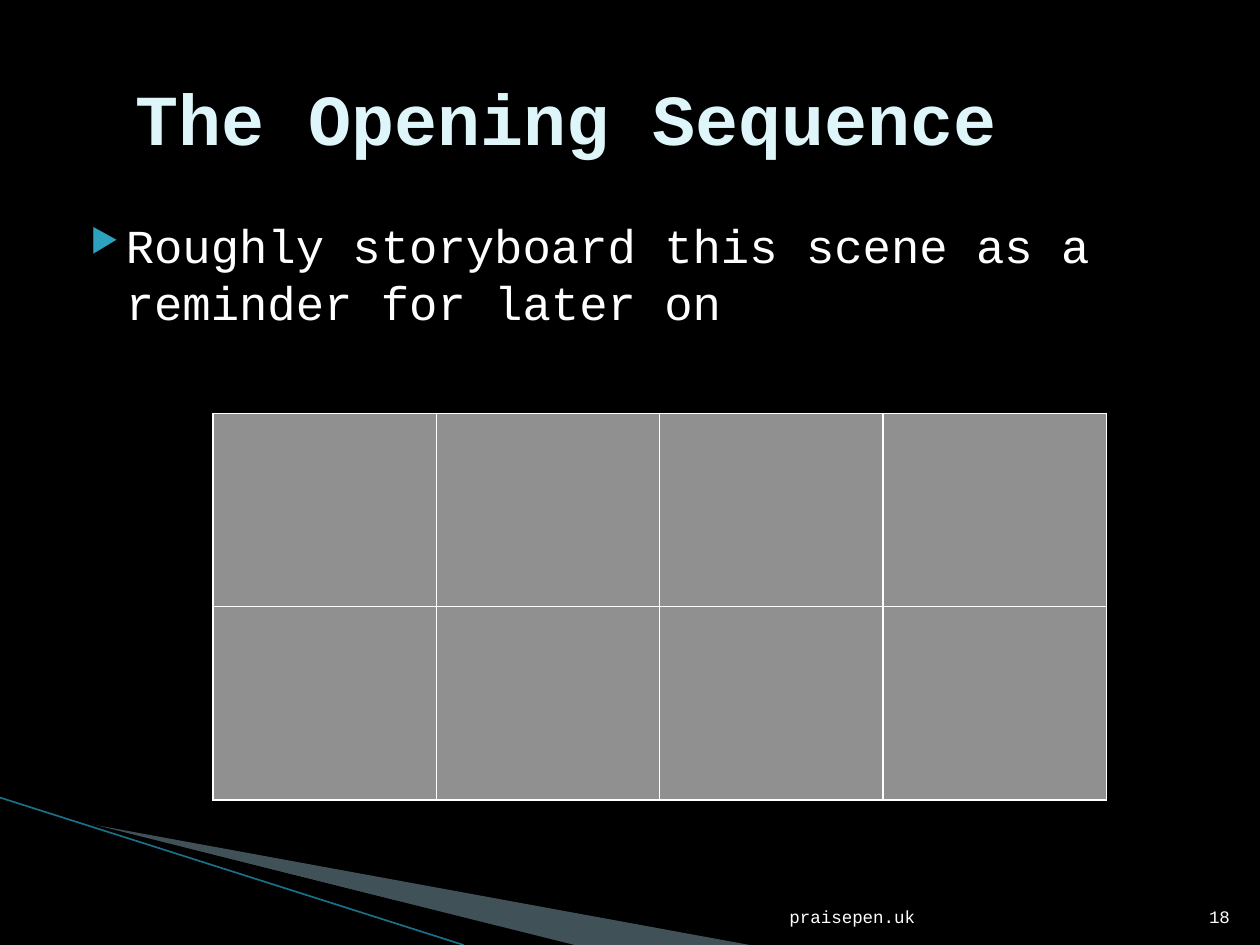
from lxml.etree import SubElement
from pptx import Presentation
from pptx.dml.color import RGBColor as RGB
from pptx.enum.shapes import MSO_CONNECTOR as Connector
from pptx.enum.text import MSO_ANCHOR as Anchor, PP_ALIGN as Align
from pptx.oxml import parse_xml
from pptx.oxml.ns import nsdecls, qn
from pptx.util import Inches, Pt

BLACK = RGB(0x00, 0x00, 0x00)
WHITE = RGB(0xFF, 0xFF, 0xFF)
ICE = RGB(0xDE, 0xF5, 0xFA)
TEAL = RGB(0x2D, 0xA2, 0xBF)
MIST = RGB(0xA0, 0xCB, 0xDC)
RULE = RGB(0x1A, 0x70, 0x88)
GREY = RGB(0x90, 0x90, 0x90)

COLUMNS, ROWS = 100, 75


class Deck:
    """Holds the style and the current slide; places are in grid columns and rows."""

    font = "Courier New"

    def __init__(self):
        self.show = Presentation()
        self.show.slide_width, self.show.slide_height = Inches(10), Inches(7.5)
        self.slide = self.show.slides.add_slide(self.show.slide_layouts[6])
        self.slide.background.fill.solid()
        self.slide.background.fill.fore_color.rgb = BLACK

    def point(self, column, row):
        return (round(self.show.slide_width * column / COLUMNS),
                round(self.show.slide_height * row / ROWS))

    def area(self, left, top, width, height):
        return *self.point(left, top), *self.point(width, height)

    def text(self, wording, area, size, color=WHITE, bold=False,
             anchor=Anchor.TOP, align=Align.LEFT, bullet=None):
        frame = self.slide.shapes.add_textbox(*self.area(*area)).text_frame
        frame.word_wrap = True
        frame.vertical_anchor = anchor
        frame.text = wording
        paragraph = frame.paragraphs[0]
        paragraph.alignment = align
        if bullet:
            self.bullet(paragraph, bullet)
        font = paragraph.runs[0].font
        font.name, font.size, font.bold = self.font, Pt(size), bold
        font.color.rgb = color

    def bullet(self, paragraph, mark):
        props = paragraph._p.get_or_add_pPr()
        props.set("marL", str(Inches(0.4)))
        props.set("indent", str(Inches(-0.28)))
        SubElement(SubElement(props, qn("a:buClr")), qn("a:srgbClr")).set("val", str(TEAL))
        SubElement(props, qn("a:buSzPct")).set("val", "68000")
        SubElement(props, qn("a:buChar")).set("char", mark)

    def wedge(self, corners, color, opacity=100):
        start, *others = [self.point(*corner) for corner in corners]
        builder = self.slide.shapes.build_freeform(*start)
        builder.add_line_segments(others, close=True)
        shape = builder.convert_to_shape()
        shape.shadow.inherit = False
        shape.line.fill.background()
        shape.fill.solid()
        shape.fill.fore_color.rgb = color
        if opacity < 100:
            tint = shape._element.spPr.find(".//" + qn("a:srgbClr"))
            SubElement(tint, qn("a:alpha")).set("val", str(opacity * 1000))

    def line(self, start, end, color, width):
        line = self.slide.shapes.add_connector(
            Connector.STRAIGHT, *self.point(*start), *self.point(*end))
        line.line.color.rgb = color
        line.line.width = Pt(width)
        SubElement(line._element.spPr, qn("a:effectLst"))

    def table(self, rows, columns, area, fill, border):
        table = self.slide.shapes.add_table(rows, columns, *self.area(*area)).table
        for cell in table.iter_cells():
            cell.fill.solid()
            cell.fill.fore_color.rgb = fill
            props = cell._tc.get_or_add_tcPr()
            for place, side in enumerate(("lnL", "lnR", "lnT", "lnB")):
                props.insert(place, parse_xml(
                    f'<a:{side} {nsdecls("a")} w="{Pt(1)}"><a:solidFill>'
                    f'<a:srgbClr val="{border}"/></a:solidFill></a:{side}>'))


def main():
    deck = Deck()

    # Corner decoration
    deck.wedge([(5.5, 65.1), (59.5, 75), (45.6, 75), (5.5, 65)], MIST, opacity=40)
    deck.wedge([(5.3, 64.9), (45.3, 75), (37.2, 75), (5.4, 65)], BLACK)
    deck.line((0, 63.3), (36.8, 75), RULE, 0.95)

    # Title and task
    deck.text("The Opening Sequence", (9.8, 3, 85.2, 12.5), 41, ICE,
              bold=True, anchor=Anchor.MIDDLE)
    deck.text("Roughly storyboard this scene as a reminder for later on",
              (5, 16.7, 90, 49), 27, bullet="▶")

    # Empty storyboard frames
    deck.table(2, 4, (16.9, 32.8, 70.9, 30.7), GREY, WHITE)

    # Slide number and footer
    for wording, left, width in (("18", 94.6, 4), ("praisepen.uk", 47.9, 25.7)):
        deck.text(wording, (left, 70.1, width, 4), 10,
                  anchor=Anchor.BOTTOM, align=Align.RIGHT)

    deck.show.save("out.pptx")


if __name__ == "__main__":
    main()
